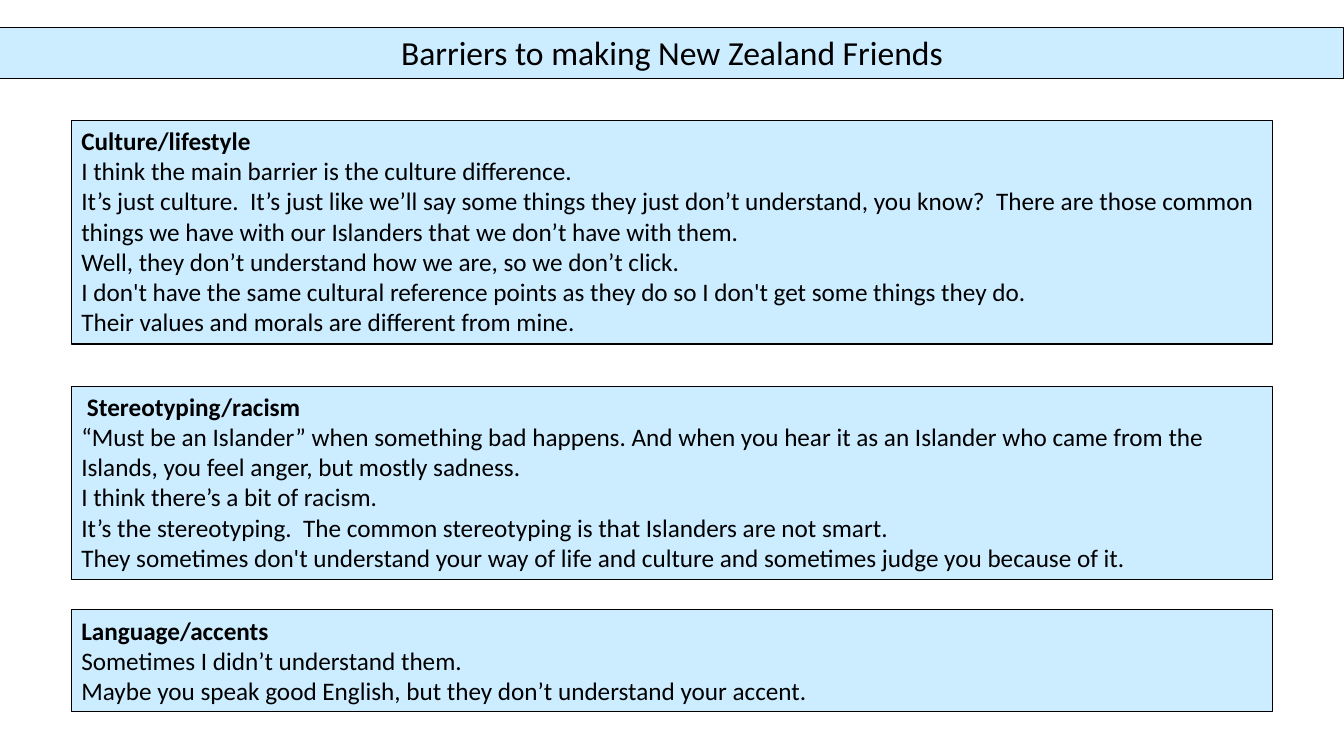
from pptx import Presentation
from pptx.dml.color import RGBColor
from pptx.enum.shapes import MSO_SHAPE as Shape
from pptx.enum.text import MSO_ANCHOR as Anchor, MSO_AUTO_SIZE as AutoSize, PP_ALIGN as Align
from pptx.util import Cm, Pt

SLIDE_WIDTH, SLIDE_HEIGHT = 33.87, 19.05
MARGIN = 1.8
PALE_BLUE, BLACK = "CCECFF", "000000"

# Each barrier: top, height, heading, quotes
BARRIERS = [
    (3.03, 5.64, "Culture/lifestyle", [
        "I think the main barrier is the culture difference.",
        "It’s just culture.  It’s just like we’ll say some things they just don’t understand, "
        "you know?  There are those common things we have with our Islanders that we don’t "
        "have with them.",
        "Well, they don’t understand how we are, so we don’t click.",
        "I don't have the same cultural reference points as they do so I don't get some "
        "things they do.",
        "Their values and morals are different from mine.",
    ]),
    (9.73, 4.88, " Stereotyping/racism", [
        "“Must be an Islander” when something bad happens. And when you hear it as an "
        "Islander who came from the Islands, you feel anger, but mostly sadness.",
        "I think there’s a bit of racism.",
        "It’s the stereotyping.  The common stereotyping is that Islanders are not smart.",
        "They sometimes don't understand your way of life and culture and sometimes judge "
        "you because of it.",
    ]),
    (15.37, 2.57, "Language/accents", [
        "Sometimes I didn’t understand them.",
        "Maybe you speak good English, but they don’t understand your accent.",
    ]),
]


def color(hex_code):
    return RGBColor.from_string(hex_code)


def add_panel(slide, left, top, width, height, lines, size, align=Align.LEFT):
    """Draw a bordered panel and return its paragraphs."""
    panel = slide.shapes.add_shape(
        Shape.RECTANGLE, Cm(left), Cm(top), Cm(width), Cm(height))
    panel.shadow.inherit = False
    panel.fill.solid()
    panel.fill.fore_color.rgb = color(PALE_BLUE)
    panel.line.color.rgb = color(BLACK)
    panel.line.width = Pt(0.75)

    frame = panel.text_frame
    frame.word_wrap = True
    frame.auto_size = AutoSize.SHAPE_TO_FIT_TEXT
    frame.vertical_anchor = Anchor.TOP
    frame.text = "\n".join(lines)
    for paragraph in frame.paragraphs:
        paragraph.alignment = align
        paragraph.font.name = "Calibri"
        paragraph.font.size = Pt(size)
        paragraph.font.color.rgb = color(BLACK)
    return frame.paragraphs


def add_title(slide, left, top, width, height):
    add_panel(slide, left, top, width, height,
              ["Barriers to making New Zealand Friends"], 24, Align.CENTER)


def add_barrier(slide, left, top, width, height, heading, quotes):
    paragraphs = add_panel(slide, left, top, width, height, [heading, *quotes], 18)
    paragraphs[0].font.bold = True


def main():
    deck = Presentation()
    deck.slide_width, deck.slide_height = Cm(SLIDE_WIDTH), Cm(SLIDE_HEIGHT)
    slide = deck.slides.add_slide(deck.slide_layouts[6])

    # Full-width title band
    add_title(slide, 0, 0.69, SLIDE_WIDTH, 1.28)

    # Quotes grouped by barrier
    for top, height, heading, quotes in BARRIERS:
        add_barrier(slide, MARGIN, top, SLIDE_WIDTH - 2 * MARGIN, height, heading, quotes)

    deck.save("out.pptx")


if __name__ == "__main__":
    main()
